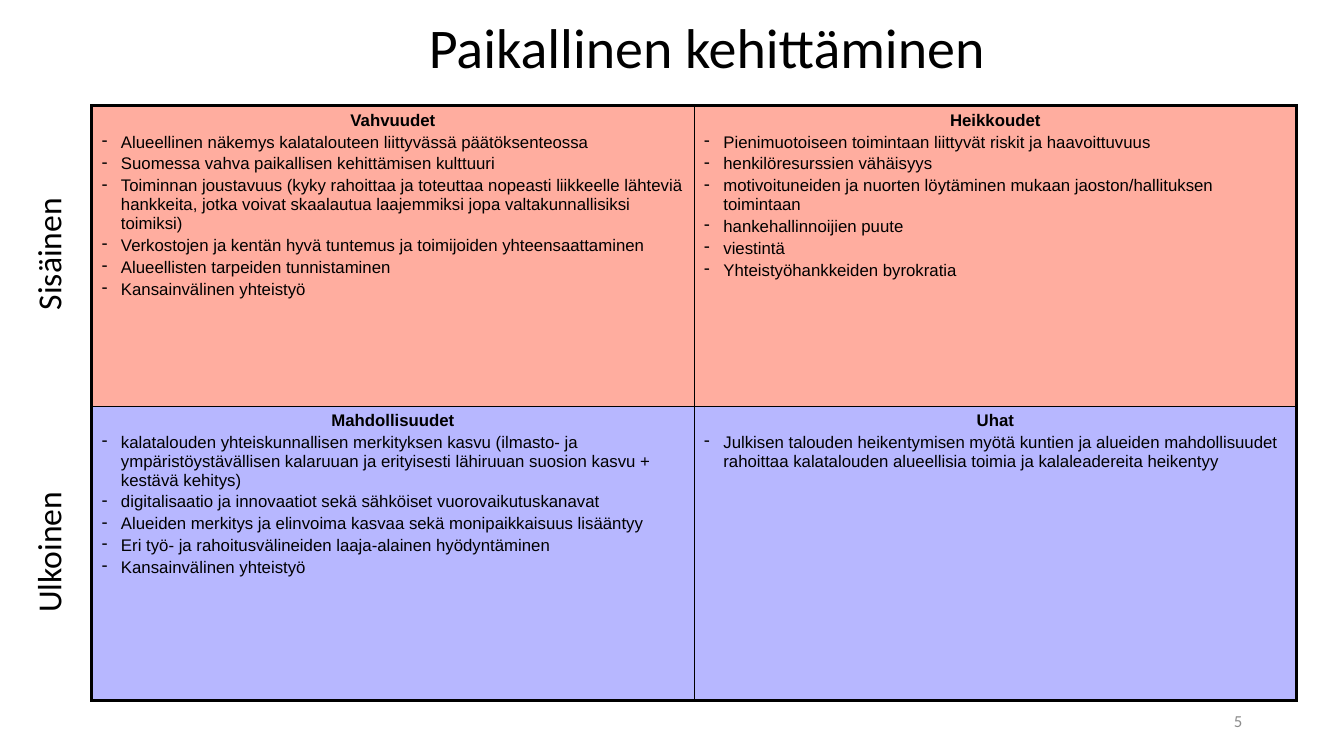
import pptx
import pptx.util
import pptx.dml.color
import pptx.enum.text
import pptx.oxml.ns
from lxml import etree

Inches, Pt = pptx.util.Inches, pptx.util.Pt
Align, Anchor = pptx.enum.text.PP_ALIGN, pptx.enum.text.MSO_ANCHOR
AutoSize = pptx.enum.text.MSO_AUTO_SIZE
qn = pptx.oxml.ns.qn


def color(hex_value):
    return pptx.dml.color.RGBColor.from_string(hex_value)


class SlideBuilder:
    heading_font, body_font, ink = "Calibri", "Arial", "000000"
    outer_line, inner_line = 2.25, 1
    indent = Inches(0.19)

    def __init__(self, presentation):
        self.slide = presentation.slides.add_slide(presentation.slide_layouts[5])

    def format_runs(self, paragraph, size, font, hex_value=ink, bold=False):
        for run in paragraph.runs:
            run.font.size, run.font.name, run.font.bold = Pt(size), font, bold
            run.font.color.rgb = color(hex_value)

    def title(self, text, left, top, width, height):
        title = self.slide.shapes.title
        title.left, title.top = Inches(left), Inches(top)
        title.width, title.height = Inches(width), Inches(height)
        frame = title.text_frame
        frame.text = text
        frame.auto_size, frame.vertical_anchor = AutoSize.NONE, Anchor.MIDDLE
        frame.paragraphs[0].alignment = Align.CENTER
        frame.paragraphs[0].line_spacing = 0.9
        self.format_runs(frame.paragraphs[0], 40, self.heading_font)

    def label(self, text, left, top, width, height, size, hex_value=ink,
              align=Align.LEFT, anchor=Anchor.TOP, rotation=0):
        box = self.slide.shapes.add_textbox(
            Inches(left), Inches(top), Inches(width), Inches(height))
        box.rotation = rotation
        frame = box.text_frame
        frame.word_wrap, frame.vertical_anchor = True, anchor
        frame.text = text
        frame.paragraphs[0].alignment = align
        self.format_runs(frame.paragraphs[0], size, self.heading_font, hex_value)

    def borders(self, cell, on_outside):
        properties = cell._tc.get_or_add_tcPr()
        for side in ("L", "R", "T", "B"):
            width = self.outer_line if on_outside[side] else self.inner_line
            line = etree.SubElement(properties, qn("a:ln" + side), w=str(int(Pt(width))))
            fill = etree.SubElement(line, qn("a:solidFill"))
            etree.SubElement(fill, qn("a:srgbClr"), val=self.ink)

    def dash_bullet(self, paragraph):
        properties = paragraph._p.get_or_add_pPr()
        properties.set("marL", str(int(self.indent)))
        properties.set("indent", str(-int(self.indent)))
        etree.SubElement(properties, qn("a:buChar"), char="-")

    def quadrant(self, cell, heading, points, fill):
        cell.fill.solid()
        cell.fill.fore_color.rgb = color(fill)
        cell.text_frame.text = "\n".join([heading, *points])
        for number, paragraph in enumerate(cell.text_frame.paragraphs):
            is_heading = number == 0
            paragraph.alignment = Align.CENTER if is_heading else Align.LEFT
            if not is_heading:
                self.dash_bullet(paragraph)
            paragraph.space_before = Pt(2.2)
            self.format_runs(paragraph, 12, self.body_font, bold=is_heading)

    def swot_table(self, rows, fills, left, top, width, row_heights):
        table = self.slide.shapes.add_table(
            2, 2, Inches(left), Inches(top), Inches(width),
            Inches(sum(row_heights))).table
        table.first_row = table.horz_banding = False
        for r, quadrants in enumerate(rows):
            table.rows[r].height = Inches(row_heights[r])
            for c, (heading, points) in enumerate(quadrants):
                cell = table.cell(r, c)
                self.borders(cell, {"L": c == 0, "R": c == 1, "T": r == 0, "B": r == 1})
                self.quadrant(cell, heading, points, fills[r])


internal = [
    ("Vahvuudet", [
        "Alueellinen näkemys kalatalouteen liittyvässä päätöksenteossa",
        "Suomessa vahva paikallisen kehittämisen kulttuuri",
        "Toiminnan joustavuus (kyky rahoittaa ja toteuttaa nopeasti liikkeelle lähteviä "
        "hankkeita, jotka voivat skaalautua laajemmiksi jopa valtakunnallisiksi toimiksi)",
        "Verkostojen ja kentän hyvä tuntemus ja toimijoiden yhteensaattaminen",
        "Alueellisten tarpeiden tunnistaminen",
        "Kansainvälinen yhteistyö"]),
    ("Heikkoudet", [
        "Pienimuotoiseen toimintaan liittyvät riskit ja haavoittuvuus",
        "henkilöresurssien vähäisyys",
        "motivoituneiden ja nuorten löytäminen mukaan jaoston/hallituksen toimintaan",
        "hankehallinnoijien puute",
        "viestintä",
        "Yhteistyöhankkeiden byrokratia"]),
]
external = [
    ("Mahdollisuudet", [
        "kalatalouden yhteiskunnallisen merkityksen kasvu (ilmasto- ja ympäristöystävällisen "
        "kalaruuan ja erityisesti lähiruuan suosion kasvu + kestävä kehitys)",
        "digitalisaatio ja innovaatiot sekä sähköiset vuorovaikutuskanavat",
        "Alueiden merkitys ja elinvoima kasvaa sekä monipaikkaisuus lisääntyy",
        "Eri työ- ja rahoitusvälineiden laaja-alainen hyödyntäminen",
        "Kansainvälinen yhteistyö"]),
    ("Uhat", [
        "Julkisen talouden heikentymisen myötä kuntien ja alueiden mahdollisuudet "
        "rahoittaa kalatalouden alueellisia toimia ja kalaleadereita heikentyy"]),
]

presentation = pptx.Presentation()
presentation.slide_width, presentation.slide_height = Inches(13.33), Inches(7.5)
builder = SlideBuilder(presentation)

# Title and page number
builder.title("Paikallinen kehittäminen", 2.51, 0.11, 9, 0.77)
builder.label("5", 9.42, 6.95, 3, 0.4, 12, "8C8C8C", Align.RIGHT, Anchor.MIDDLE)

# SWOT quadrants
builder.swot_table([internal, external], ["FFAD9F", "B7B7FF"],
                   0.91, 1.05, 11.95, [2.98, 2.92])

# Row labels, read from bottom to top
for row_label, label_top in (("Sisäinen", 2.07), ("Ulkoinen", 5.07)):
    builder.label(row_label, -0.38, label_top, 1.71, 0.5, 24, rotation=270)

presentation.save("out.pptx")
